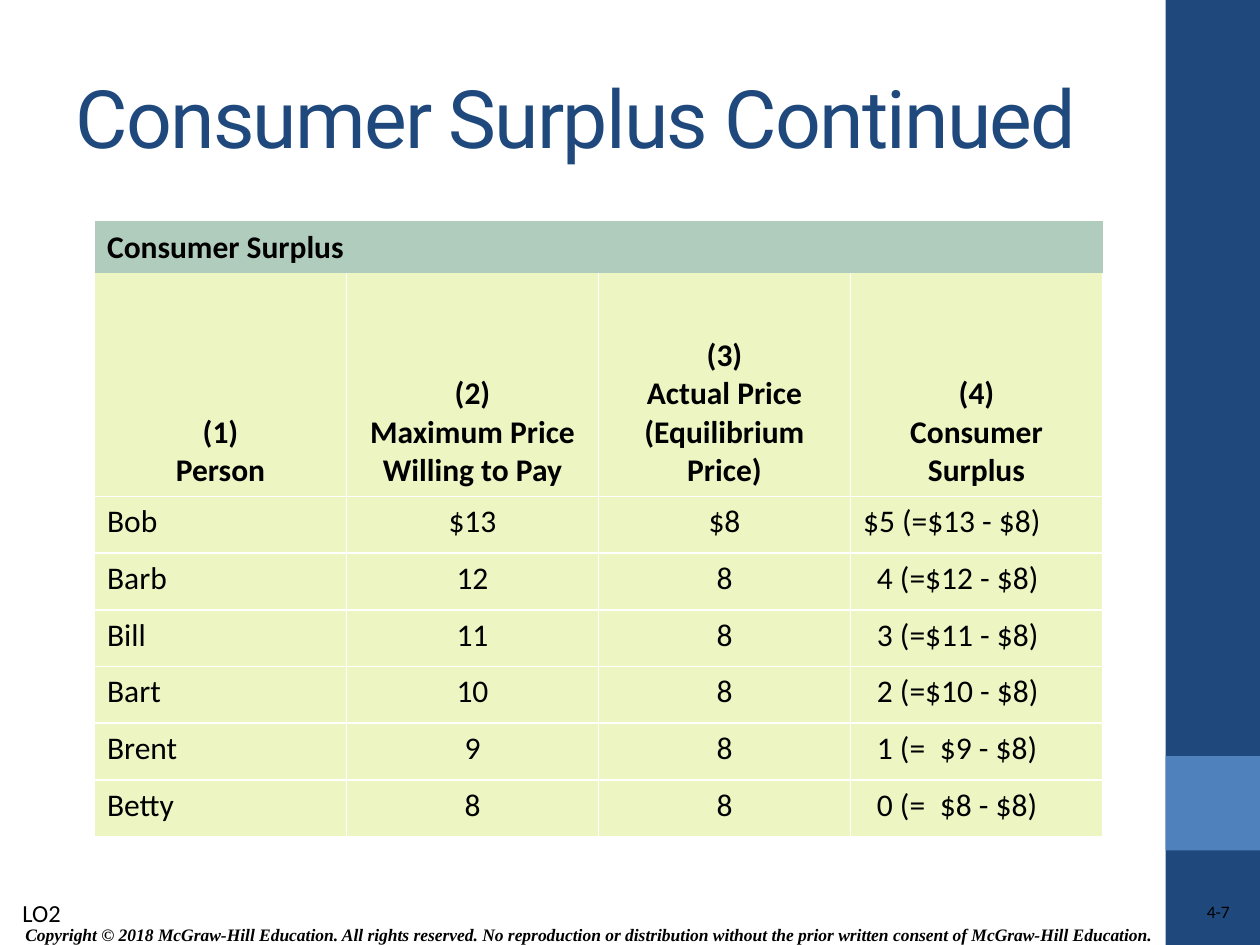
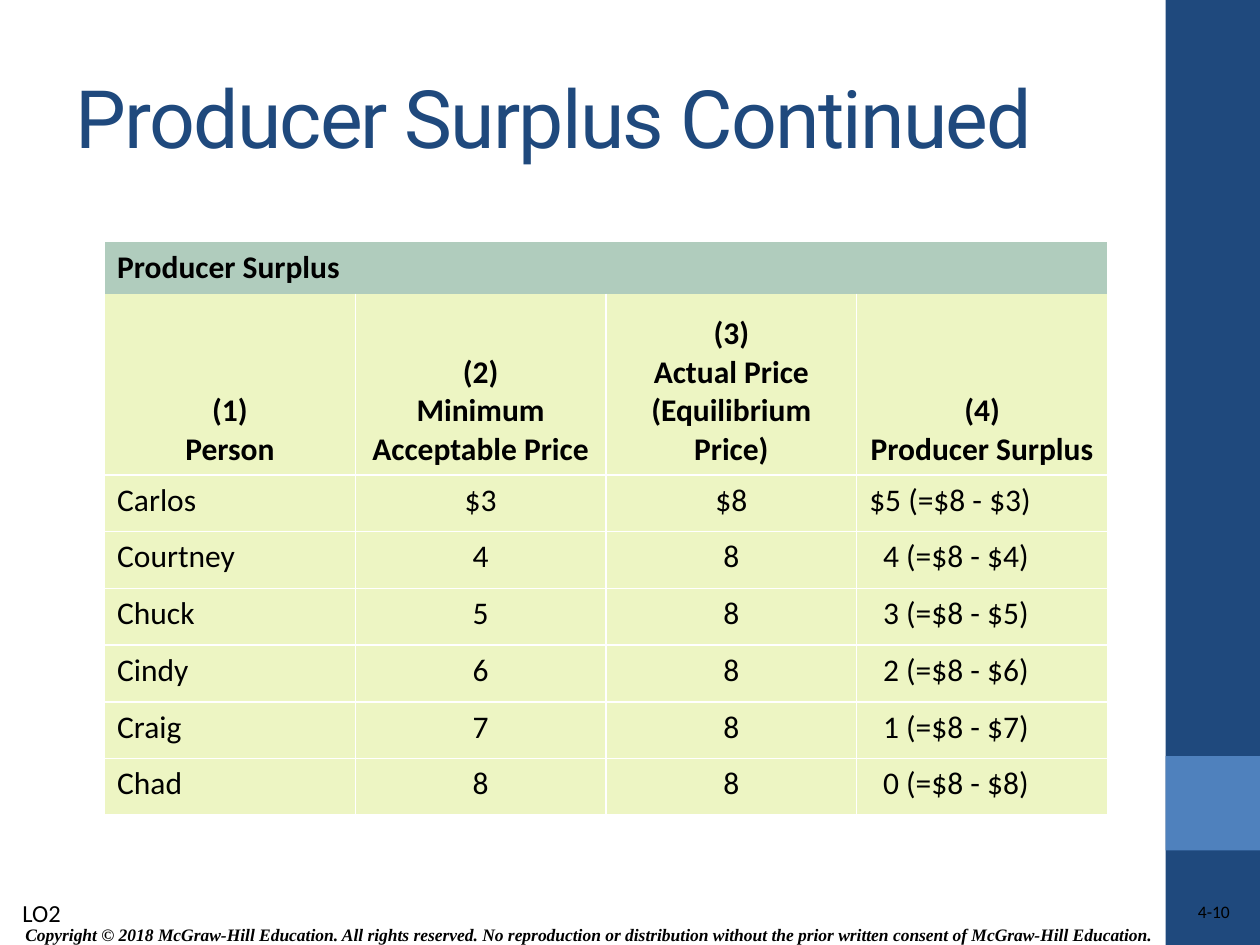
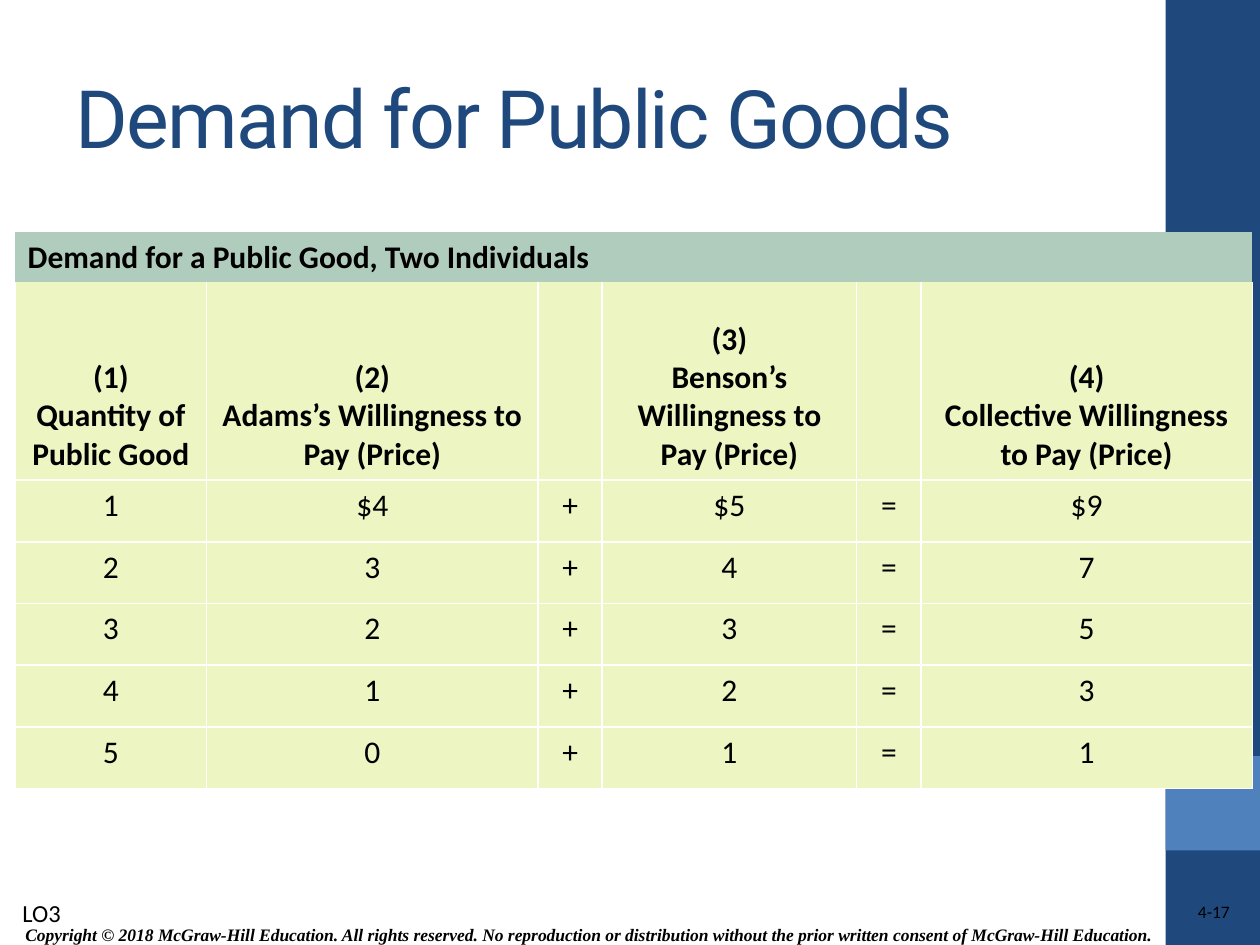
from dataclasses import dataclass

from lxml import etree
from pptx import Presentation
from pptx import util as u
from pptx.dml.color import RGBColor
from pptx.enum import shapes, text
from pptx.oxml.ns import qn

# Shared style
NAVY, BLUE, WHITE, BLACK = "1F497D", "4F81BD", "FFFFFF", "000000"
CAPTION_FILL, CELL_FILL = "B0CCBD", "EDF5C3"
BODY_FONT, TITLE_FONT, LEGAL_FONT = "Calibri", "Roboto", "Times New Roman"
COPYRIGHT = ("Copyright © 2018 McGraw-Hill Education. All rights reserved. "
             "No reproduction or distribution without the prior written consent "
             "of McGraw-Hill Education.")
ALIGN = {"l": text.PP_ALIGN.LEFT, "c": text.PP_ALIGN.CENTER,
         "r": text.PP_ALIGN.RIGHT, "j": text.PP_ALIGN.JUSTIFY}
BAND_LEFT, BAND_WIDTH = 9.25, 0.75
DIGIT_INDENT = 0.21  # lines bare digits up with those after a dollar sign
PRICE_TAB = 0.5


@dataclass
class DataTable:
    caption: str
    left: float
    top: float
    widths: list[float]
    caption_height: float
    heading_height: float
    row_height: float
    headings: list[list[str]]
    aligns: str
    rows: list[list[str]]


@dataclass
class TableSlide:
    title: str
    objective: str
    number: str
    table: DataTable


def color(value: str) -> RGBColor:
    return RGBColor.from_string(value)


def add_run(p, content: str, size: float, font: str = BODY_FONT, fill: str = BLACK,
            bold: bool = False, italic: bool = False):
    r = p.add_run()
    r.text = content
    r.font.size, r.font.name = u.Pt(size), font
    r.font.bold, r.font.italic = bold, italic
    r.font.color.rgb = color(fill)
    return r


def add_band(s, top: float, height: float, fill: str) -> None:
    sp = s.shapes.add_shape(shapes.MSO_SHAPE.RECTANGLE, u.Inches(BAND_LEFT), u.Inches(top),
                            u.Inches(BAND_WIDTH), u.Inches(height))
    sp.shadow.inherit = False
    sp.fill.solid()
    sp.fill.fore_color.rgb = color(fill)
    sp.line.fill.background()


def add_label(s, box: tuple[float, ...], align: str = "l"):
    tf = s.shapes.add_textbox(*map(u.Inches, box)).text_frame
    tf.word_wrap = True
    tf.paragraphs[0].alignment = ALIGN[align]
    return tf


def set_title(s, title: str) -> None:
    sp = s.shapes.title
    sp.left, sp.top = u.Inches(0.5), u.Inches(0.3)
    sp.width, sp.height = u.Inches(8.33), u.Inches(1.25)
    tf = sp.text_frame
    tf.auto_size = text.MSO_AUTO_SIZE.NONE
    tf.vertical_anchor = text.MSO_ANCHOR.MIDDLE
    p = tf.paragraphs[0]
    p.alignment = ALIGN["l"]
    r = add_run(p, title, 46, TITLE_FONT, NAVY)
    r.font._element.set("spc", "-100")


def add_frame(s, objective: str, number: str) -> None:
    """Side bands, copyright line, page number and learning objective."""
    add_band(s, 0, 7.5, NAVY)
    add_band(s, 6, 0.75, BLUE)

    tf = add_label(s, (0.06, 7.28, 9.22, 0.28), "c")
    tf.vertical_anchor = text.MSO_ANCHOR.MIDDLE
    add_run(tf.paragraphs[0], COPYRIGHT, 10, LEGAL_FONT, bold=True, italic=True)

    tf = add_label(s, (7.81, 7.15, 1.95, 0.2), "r")
    tf.margin_left = tf.margin_right = tf.margin_top = tf.margin_bottom = 0
    tf.paragraphs[0].line_spacing = 1.02
    add_run(tf.paragraphs[0], number, 10)

    tf = add_label(s, (0.08, 7.08, 0.53, 0.34))
    tf.auto_size = text.MSO_AUTO_SIZE.SHAPE_TO_FIT_TEXT
    add_run(tf.paragraphs[0], objective, 14)


def set_borders(cell, visible: str) -> None:
    """Draw white lines on the named sides (of L, R, T, B) and none elsewhere."""
    tc_pr = cell._tc.get_or_add_tcPr()
    for side in "LRTB":
        ln = etree.SubElement(tc_pr, qn(f"a:ln{side}"), w=str(u.Pt(1)))
        if side in visible:
            fill = etree.SubElement(ln, qn("a:solidFill"))
            etree.SubElement(fill, qn("a:srgbClr"), val=WHITE)
        else:
            etree.SubElement(ln, qn("a:noFill"))


def style_cell(cell, fill: str, borders: str, anchor) -> None:
    set_borders(cell, borders)
    cell.fill.solid()
    cell.fill.fore_color.rgb = color(fill)
    cell.vertical_anchor = anchor


def write_cell(cell, lines: list[str], align: str, bold: bool) -> None:
    tf = cell.text_frame
    for i, line in enumerate(lines):
        p = tf.add_paragraph() if i else tf.paragraphs[0]
        p.alignment = ALIGN[align]
        if "\t" in line:
            tabs = etree.SubElement(p._p.get_or_add_pPr(), qn("a:tabLst"))
            etree.SubElement(tabs, qn("a:tab"), pos=str(u.Inches(PRICE_TAB)), algn="l")
        add_run(p, line, 18, bold=bold)


def add_data_table(s, data: DataTable) -> None:
    heights = [data.caption_height, data.heading_height] + [data.row_height] * len(data.rows)
    last = len(data.widths) - 1
    frame = s.shapes.add_table(len(heights), last + 1, u.Inches(data.left), u.Inches(data.top),
                               u.Inches(sum(data.widths)), u.Inches(sum(heights)))
    table = frame.table
    table.first_row = table.horz_banding = False
    for column, width in zip(table.columns, data.widths):
        column.width = u.Inches(width)
    for row, height in zip(table.rows, heights):
        row.height = u.Inches(height)

    # Caption row
    for cell in table.rows[0].cells:
        style_cell(cell, CAPTION_FILL, "", text.MSO_ANCHOR.BOTTOM)
    table.cell(0, 0).merge(table.cell(0, last))
    write_cell(table.cell(0, 0), [data.caption], "l", True)

    # Column headings
    for cell, lines in zip(table.rows[1].cells, data.headings):
        style_cell(cell, CELL_FILL, "LRB", text.MSO_ANCHOR.BOTTOM)
        write_cell(cell, lines, "c", True)

    # Values
    for i, values in enumerate(data.rows, start=2):
        for j, (value, align) in enumerate(zip(values, data.aligns)):
            cell = table.cell(i, j)
            style_cell(cell, CELL_FILL, "LRTB", text.MSO_ANCHOR.TOP)
            if align == "j" and not value.startswith("$"):
                cell.margin_left = u.Inches(DIGIT_INDENT)
            write_cell(cell, [value], align, False)


# Slide content
ACTUAL_PRICE = ["(3)", "Actual Price (Equilibrium Price)"]

CONSUMER = DataTable(
    "Consumer Surplus", 0.75, 1.75, [2] * 4, 0.42, 1.77, 0.45,
    [["(1)", "Person"], ["(2)", "Maximum Price Willing to Pay"], ACTUAL_PRICE,
     ["(4)", "Consumer Surplus"]],
    "lccj",
    [["Bob", "$13", "$8", "$5 (=$13 - $8)"],
     ["Barb", "12", "8", "4 (=$12 - $8)"],
     ["Bill", "11", "8", "3 (=$11 - $8)"],
     ["Bart", "10", "8", "2 (=$10 - $8)"],
     ["Brent", "9", "8", "1 (=\t$9 - $8)"],
     ["Betty", "8", "8", "0 (=\t$8 - $8)"]])

PRODUCER = DataTable(
    "Producer Surplus", 0.83, 1.92, [1.99] * 4, 0.41, 1.44, 0.45,
    [["(1)", "Person"], ["(2)", "Minimum Acceptable Price"], ACTUAL_PRICE,
     ["(4)", "Producer Surplus"]],
    "lccj",
    [["Carlos", "$3", "$8", "$5 (=$8 - $3)"],
     ["Courtney", "4", "8", "4 (=$8 - $4)"],
     ["Chuck", "5", "8", "3 (=$8 - $5)"],
     ["Cindy", "6", "8", "2 (=$8 - $6)"],
     ["Craig", "7", "8", "1 (=$8 - $7)"],
     ["Chad", "8", "8", "0 (=$8 - $8)"]])

PUBLIC_GOOD = DataTable(
    "Demand for a Public Good, Two Individuals", 0.12, 1.84,
    [1.52, 2.63, 0.51, 2.02, 0.51, 2.63], 0.4, 1.57, 0.49,
    [["(1)", "Quantity of Public Good"], ["(2)", "Adams’s Willingness to Pay (Price)"], [],
     ["(3)", "Benson’s Willingness to Pay (Price)"], [],
     ["(4)", "Collective Willingness", "to Pay (Price)"]],
    "cccccc",
    [["1", "$4", "+", "$5", "=", "$9"],
     ["2", "3", "+", "4", "=", "7"],
     ["3", "2", "+", "3", "=", "5"],
     ["4", "1", "+", "2", "=", "3"],
     ["5", "0", "+", "1", "=", "1"]])

SLIDES = [
    TableSlide("Consumer Surplus Continued", "LO2", "4-7", CONSUMER),
    TableSlide("Producer Surplus Continued", "LO2", "4-10", PRODUCER),
    TableSlide("Demand for Public Goods", "LO3", "4-17", PUBLIC_GOOD),
]


def main() -> None:
    prs = Presentation()
    prs.slide_width, prs.slide_height = u.Inches(10), u.Inches(7.5)
    title_only = prs.slide_layouts[5]
    for item in SLIDES:
        s = prs.slides.add_slide(title_only)
        set_title(s, item.title)
        add_frame(s, item.objective, item.number)
        add_data_table(s, item.table)
    prs.save("out.pptx")


if __name__ == "__main__":
    main()
